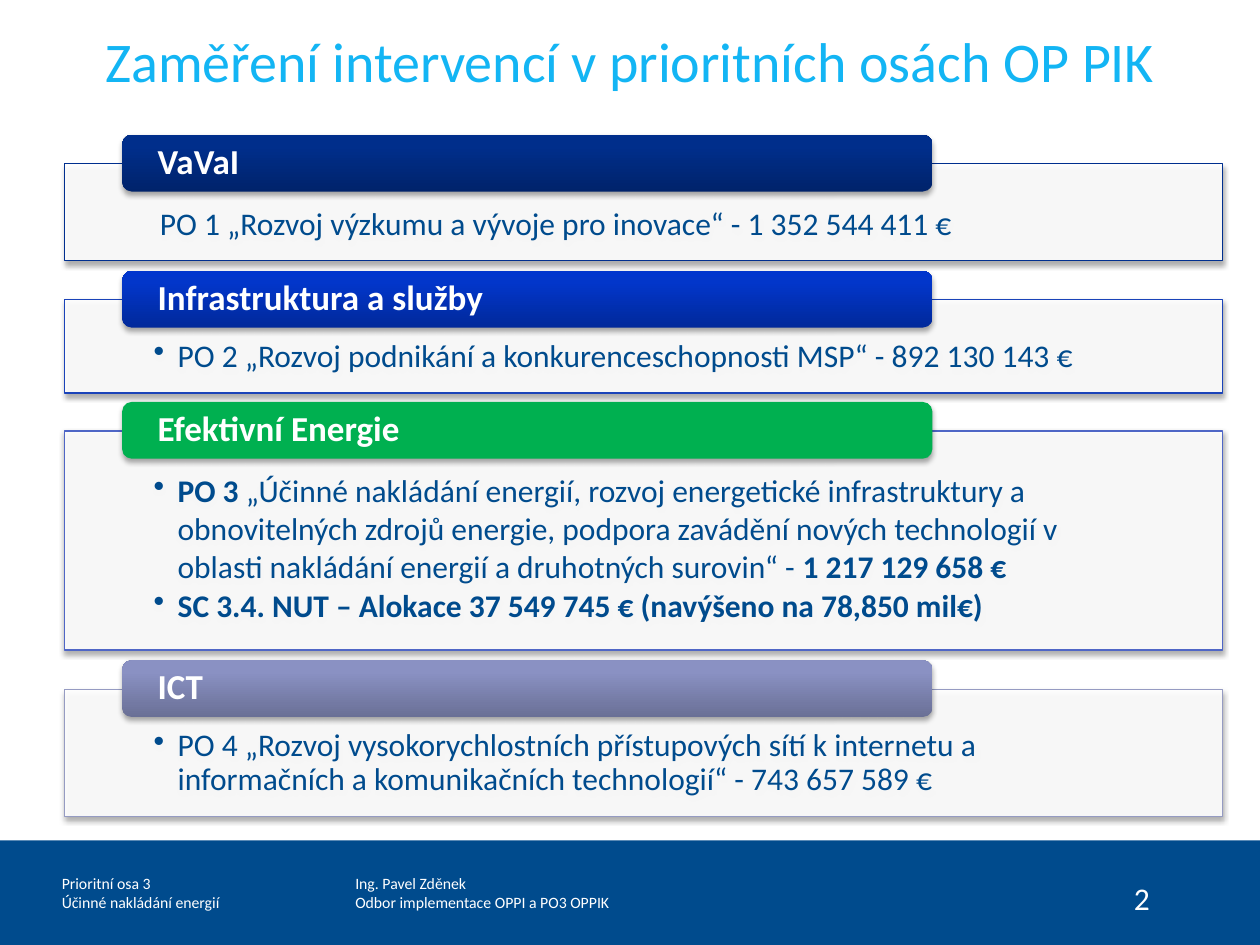
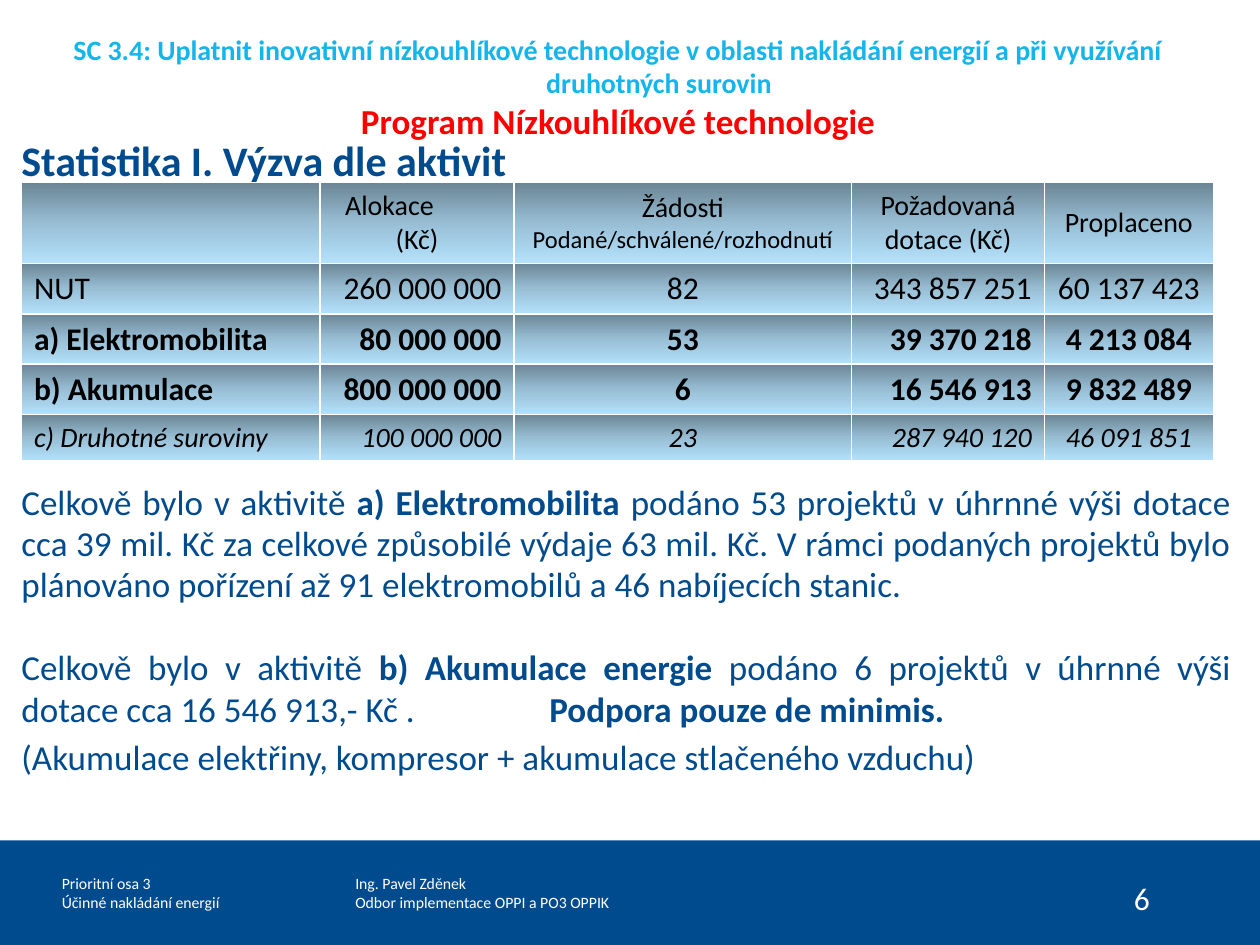
from lxml import etree
from pptx import Presentation
from pptx.dml.color import RGBColor
from pptx.enum.shapes import MSO_SHAPE
from pptx.enum.text import MSO_ANCHOR, PP_ALIGN
from pptx.oxml import parse_xml
from pptx.oxml.ns import nsdecls, qn
from pptx.util import Inches, Pt

RECT, ROUND = MSO_SHAPE.RECTANGLE, MSO_SHAPE.ROUNDED_RECTANGLE
TOP, MIDDLE = MSO_ANCHOR.TOP, MSO_ANCHOR.MIDDLE
LEFT, CENTER, RIGHT, JUSTIFY = PP_ALIGN.LEFT, PP_ALIGN.CENTER, PP_ALIGN.RIGHT, PP_ALIGN.JUSTIFY

FONT = "Calibri"
NAVY = RGBColor(0x00, 0x4B, 0x8D)
WHITE = RGBColor(0xFF, 0xFF, 0xFF)
BLACK = RGBColor(0x00, 0x00, 0x00)
RED = RGBColor(0xFF, 0x00, 0x00)
GREEN = RGBColor(0x00, 0xB0, 0x50)
SKY = RGBColor(0x13, 0xB5, 0xF4)
CYAN = RGBColor(0x13, 0xB5, 0xEA)

SHADOW = (
    f'<a:outerShdw {nsdecls("a")} blurRad="40000" dist="23000" dir="5400000" rotWithShape="0">'
    '<a:srgbClr val="000000"><a:alpha val="35000"/></a:srgbClr></a:outerShdw>'
)


def gradient(stops, angle):
    gs = "".join(f'<a:gs pos="{pos * 1000}"><a:srgbClr val="{c}"/></a:gs>' for pos, c in stops)
    return parse_xml(
        f'<a:gradFill {nsdecls("a")} rotWithShape="1"><a:gsLst>{gs}</a:gsLst>'
        f'<a:lin ang="{angle * 60000}" scaled="0"/></a:gradFill>'
    )


def write(tf, text, size=18, color=NAVY, bold=False, italic=False, align=LEFT, anchor=TOP,
          insets=None, before=0, after=0, spacing=None, indent=0, bullet=False, tab=None):
    """Add one paragraph; asterisks switch bold on and off."""
    tf.word_wrap = True
    tf.vertical_anchor = anchor
    if insets:
        tf.margin_left, tf.margin_top, tf.margin_right, tf.margin_bottom = map(Inches, insets)
    p = tf.paragraphs[0]
    if p.runs:
        p = tf.add_paragraph()
        p.space_before = Pt(before)
    p.alignment = align
    p.space_after = Pt(after)
    if spacing:
        p.line_spacing = spacing
    pPr = p._p.get_or_add_pPr()
    if indent:
        pPr.set("marL", str(Inches(indent)))
    if bullet:
        pPr.set("indent", str(-Inches(indent)))
        etree.SubElement(pPr, qn("a:buChar")).set("char", "•")
    if tab:
        stops = etree.SubElement(pPr, qn("a:tabLst"))
        stop = etree.SubElement(stops, qn("a:tab"))
        stop.set("pos", str(Inches(tab)))
        stop.set("algn", "l")
    for i, part in enumerate(text.split("*")):
        if part:
            r = p.add_run()
            r.text = part
            r.font.name, r.font.size = FONT, Pt(size)
            r.font.color.rgb = color
            r.font.bold = bold or i % 2 == 1
            r.font.italic = italic


prs = Presentation()
prs.slide_width, prs.slide_height = Inches(10), Inches(7.5)
NONE = (0, 0, 0, 0)
FOOTERS = [
    (2.82, 2.4, ["Ing. Pavel Zděnek", "Odbor implementace OPPI a PO3 OPPIK"]),
    (0.49, 2.05, ["Prioritní osa 3", "Účinné nakládání energií"]),
]
for number in ("2", "6"):
    s = prs.slides.add_slide(prs.slide_layouts[6])
    s.background.fill.solid()
    s.background.fill.fore_color.rgb = NAVY
    sp = s.shapes.add_shape(RECT, 0, 0, Inches(10), Inches(6.67))
    sp.shadow.inherit = False
    sp.fill.solid()
    sp.fill.fore_color.rgb = WHITE
    sp.line.fill.background()
    for x, w, lines in FOOTERS:
        tf = s.shapes.add_textbox(Inches(x), Inches(6.67), Inches(w), Inches(0.83)).text_frame
        for line in lines:
            write(tf, line, size=9, color=WHITE, anchor=MIDDLE, insets=NONE)
    tf = s.shapes.add_textbox(Inches(8.9), Inches(6.93), Inches(0.5), Inches(0.4)).text_frame
    write(tf, number, color=WHITE)

s = prs.slides[0]
tf = s.shapes.add_textbox(Inches(0.5), Inches(0.21), Inches(9.01), Inches(0.54)).text_frame
write(tf, "Zaměření intervencí v prioritních osách OP PIK", size=32, color=SKY,
      align=CENTER, insets=NONE)

PLAIN = dict(align=JUSTIFY, indent=0.05)
BULLET = dict(bullet=True, indent=0.19, after=3)
TIGHT = dict(BULLET, spacing=0.9)
AXES = [
    ("VaVaI", 1.3, 0.77, "002F8F", ("00236B", "002E8B", "002E8C"),
     [("PO 1 „Rozvoj výzkumu a vývoje pro inovace“ - 1 352 544 411 €", PLAIN)]),
    ("Infrastruktura a služby", 2.38, 0.74, "1A43B9", ("01299B", "0236CA", "0035CD"),
     [("PO 2 „Rozvoj podnikání a konkurenceschopnosti MSP“ - 892 130 143 €", TIGHT)]),
    ("Efektivní Energie", 3.42, 1.74, "4F66C6", None,
     [("*PO 3* „Účinné nakládání energií, rozvoj energetické infrastruktury a obnovitelných "
       "zdrojů energie, podpora zavádění nových technologií v oblasti nakládání energií a "
       "druhotných surovin“ - *1 217 129 658 €*", BULLET),
      ("*SC 3.4. NUT – Alokace 37 549 745 € (navýšeno na 78,850 mil€)*", TIGHT)]),
    ("ICT", 5.47, 1.01, "959BC2", ("6A7096", "8A91C3", "8A91C5"),
     [("PO 4 „Rozvoj vysokorychlostních přístupových sítí k internetu a informačních a "
       "komunikačních technologií“ - 743 657 589 €", TIGHT)]),
]
for name, y, h, edge, shades, items in AXES:
    panel = s.shapes.add_shape(RECT, Inches(0.51), Inches(y), Inches(9.19), Inches(h))
    panel.fill.solid()
    panel.fill.fore_color.rgb = WHITE
    clr = panel._element.spPr.find(qn("a:solidFill"))[0]
    etree.SubElement(clr, qn("a:alpha")).set("val", "90000")
    panel.line.color.rgb = RGBColor.from_string(edge)
    panel.line.width = Pt(0.75)
    for text, fmt in items:
        write(panel.text_frame, text, insets=(0.71, 0.32, 0.71, 0.14), **fmt)

    tag = s.shapes.add_shape(ROUND, Inches(0.97), Inches(y - 0.23), Inches(6.43), Inches(0.45))
    if shades:
        tag._element.spPr.insert(2, gradient(zip((0, 80, 100), shades), 270))
    else:
        tag.fill.solid()
        tag.fill.fore_color.rgb = GREEN
    tag.line.fill.background()
    write(tag.text_frame, name, size=20, color=WHITE, bold=True, anchor=MIDDLE,
          spacing=0.9, insets=(0.26, 0, 0.26, 0))
    for sp in (panel, tag):
        sp.shadow.inherit = False
        sp._element.spPr.find(qn("a:effectLst")).append(parse_xml(SHADOW))

s = prs.slides[1]
tf = s.shapes.add_textbox(Inches(0.17), Inches(1.07), Inches(9.6), Inches(0.4)).text_frame
write(tf, "Statistika I. Výzva dle aktivit", size=24, bold=True, insets=NONE)

tf = s.shapes.add_textbox(Inches(0.17), Inches(3.83), Inches(9.6), Inches(2.5)).text_frame
BODY = dict(size=20, align=JUSTIFY, insets=NONE, spacing=0.98)
write(tf, "Celkově bylo v aktivitě *a) Elektromobilita* podáno 53 projektů v úhrnné výši dotace "
      "cca 39 mil. Kč za celkové způsobilé výdaje 63 mil. Kč. V rámci podaných projektů bylo "
      "plánováno pořízení až 91 elektromobilů a 46 nabíjecích stanic.", **BODY)
write(tf, "Celkově bylo v aktivitě *b) Akumulace energie* podáno 6 projektů v úhrnné výši dotace "
      "cca 16 546 913,- Kč .\t*Podpora pouze de minimis.*", before=24, tab=4.19, **BODY)
write(tf, "(Akumulace elektřiny, kompresor + akumulace stlačeného vzduchu)", before=4, **BODY)

HEADS = [
    [],
    [("Alokace", dict(size=16, indent=0.1)), ("(Kč)", dict(size=16, align=CENTER))],
    [("Žádosti", dict(size=16, align=CENTER)),
     ("Podané/schválené/rozhodnutí", dict(size=14, align=CENTER))],
    [("Požadovaná dotace (Kč)", dict(size=16, align=CENTER))],
    [("Proplaceno", dict(size=16, align=CENTER))],
]
ROWS = [
    (("NUT", "260 000 000", "82", "343 857 251", "60 137 423"), {}),
    (("a) Elektromobilita", "80 000 000", "53", "39 370 218", "4 213 084"), dict(bold=True)),
    (("b) Akumulace", "800 000 000", "6", "16 546 913", "9 832 489"), dict(bold=True)),
    (("c) Druhotné suroviny", "100 000 000", "23", "287 940 120", "46 091 851"),
     dict(size=16, italic=True)),
]
ALIGNS = (LEFT, RIGHT, CENTER, RIGHT, CENTER)
grid = [HEADS] + [[[(v, dict(fmt, align=a))] for v, a in zip(values, ALIGNS)]
                  for values, fmt in ROWS]
tbl = s.shapes.add_table(5, 5, Inches(0.17), Inches(1.45), Inches(9.46), Inches(2.2)).table
for col, w in zip(tbl.columns, (2.37, 1.54, 2.68, 1.53, 1.34)):
    col.width = Inches(w)
for row, h, cells in zip(tbl.rows, (0.64, 0.4, 0.4, 0.4, 0.36), grid):
    row.height = Inches(h)
    for cell, paras in zip(row.cells, cells):
        cell.vertical_anchor = MIDDLE
        cell._tc.get_or_add_tcPr().append(
            gradient([(0, "6B8595"), (50, "98BED4"), (100, "B4E1FC")], 90))
        for text, fmt in paras:
            write(cell.text_frame, text, color=BLACK, anchor=MIDDLE, **fmt)

tf = s.shapes.add_textbox(Inches(0.4), Inches(0.25), Inches(9.01), Inches(0.88)).text_frame
HEADING = dict(bold=True, align=CENTER, anchor=MIDDLE, insets=NONE)
write(tf, "SC 3.4: Uplatnit inovativní nízkouhlíkové technologie v oblasti nakládání energií "
      "a při využívání", size=16, color=CYAN, **HEADING)
write(tf, "druhotných surovin", size=16, color=CYAN, indent=0.65, **HEADING)
write(tf, "Program Nízkouhlíkové technologie", size=20, color=RED, **HEADING)

prs.save("out.pptx")
